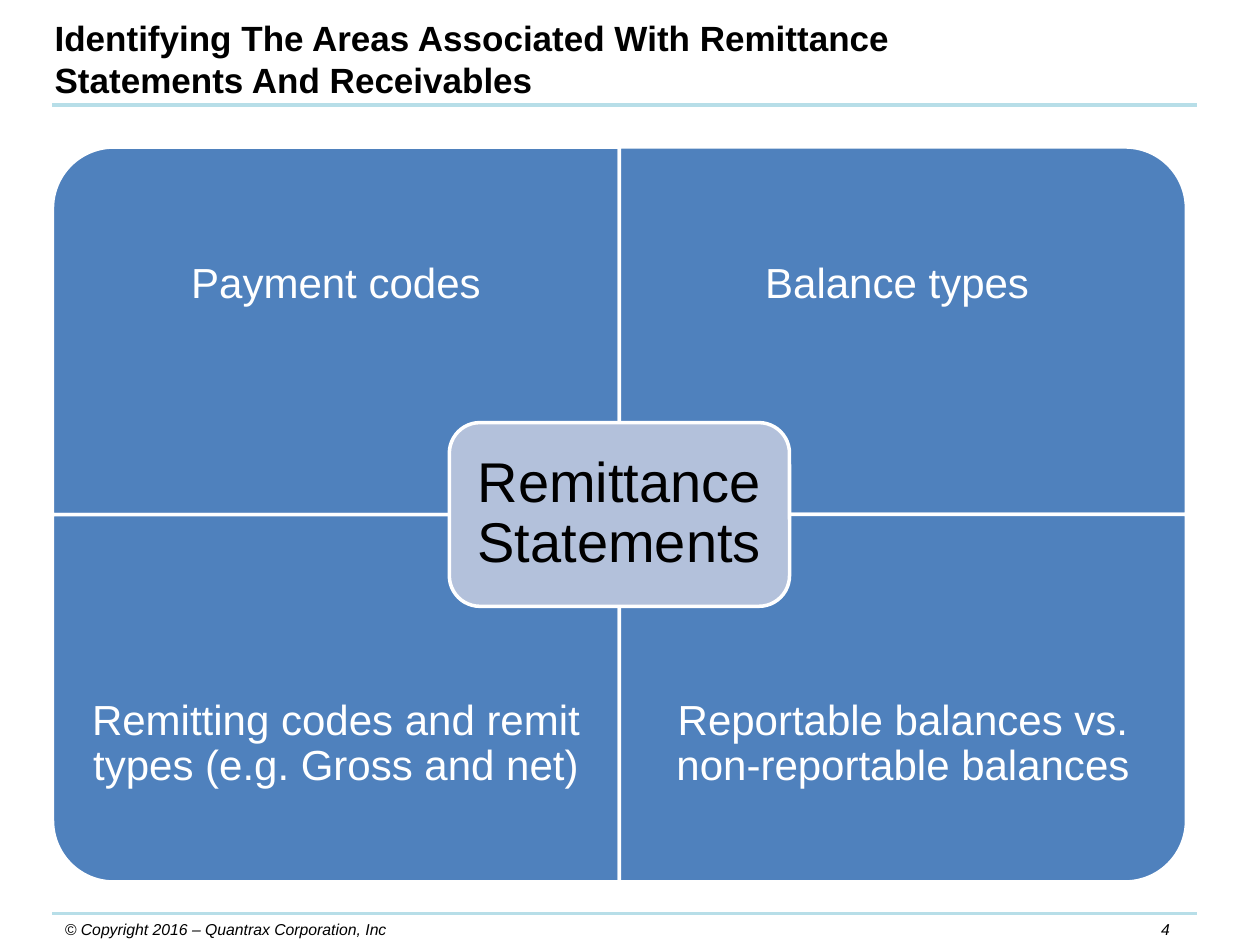
"""Build the slide on the areas associated with remittance statements."""
from dataclasses import dataclass

from pptx import Presentation
from pptx import util as u
from pptx.dml.color import RGBColor
from pptx.enum import shapes, text
from pptx.oxml.ns import qn

COLORS = {"ink": "000000", "paper": "FFFFFF", "rule": "B7DEE8",
          "area": "4F81BD", "hub": "B3C1DB"}
FONT = "Arial"
MATRIX_LEFT, MATRIX_TOP = 30, 84
AREA_WIDTH, AREA_HEIGHT = 324, 210
LABEL_HEIGHT = AREA_HEIGHT * 0.75
HUB_WIDTH, HUB_HEIGHT = 194.4, 105


@dataclass(frozen=True)
class Box:
    left: float
    top: float
    width: float
    height: float

    def lengths(self) -> tuple:
        return tuple(u.Pt(n) for n in (self.left, self.top, self.width, self.height))

    def turned(self) -> "Box":
        shift = (self.width - self.height) / 2
        return Box(self.left + shift, self.top - shift, self.height, self.width)


@dataclass(frozen=True)
class Area:
    caption: str
    column: int
    row: int
    rotation: int


AREAS = [
    Area("Payment codes", 0, 0, 270),
    Area("Balance types ", 1, 0, 0),
    Area("Remitting codes and remit types (e.g. Gross and net)", 0, 1, 180),
    Area("Reportable balances vs. non-reportable balances", 1, 1, 90),
]


def rgb(name: str) -> RGBColor:
    return RGBColor.from_string(COLORS[name])


def write(frame, words: str, size: float, color: str, align,
          bold: bool = False, italic: bool = False):
    frame.word_wrap = True
    paragraph = frame.paragraphs[0]
    paragraph.alignment = align
    run = paragraph.add_run()
    run.text = words
    run.font.name, run.font.size = FONT, u.Pt(size)
    run.font.bold, run.font.italic = bold, italic
    run.font.color.rgb = rgb(color)
    return paragraph


def write_caption(frame, words: str, size: float, color: str, margin: float) -> None:
    frame.margin_left = frame.margin_right = u.Pt(margin)
    frame.margin_top = frame.margin_bottom = u.Pt(margin)
    frame.vertical_anchor = text.MSO_ANCHOR.MIDDLE
    paragraph = write(frame, words, size, color, text.PP_ALIGN.CENTER)
    paragraph.line_spacing = 0.9


def draw_panel(slide, preset, box: Box, fill: str, rotation: int = 0):
    panel = slide.shapes.add_shape(preset, *box.lengths())
    panel.rotation = rotation
    panel.shadow.inherit = False
    panel.fill.solid()
    panel.fill.fore_color.rgb = rgb(fill)
    panel.line.color.rgb = rgb("paper")
    panel.line.width = u.Pt(2)
    return panel


def draw_area(slide, area: Area) -> None:
    box = Box(MATRIX_LEFT + area.column * AREA_WIDTH,
              MATRIX_TOP + area.row * AREA_HEIGHT, AREA_WIDTH, AREA_HEIGHT)
    outline = box.turned() if area.rotation % 180 else box
    draw_panel(slide, shapes.MSO_SHAPE.ROUND_1_RECTANGLE, outline, "area", area.rotation)
    label_top = box.top + area.row * (AREA_HEIGHT - LABEL_HEIGHT)
    label = Box(box.left, label_top, AREA_WIDTH, LABEL_HEIGHT)
    caption = slide.shapes.add_textbox(*label.lengths())
    write_caption(caption.text_frame, area.caption, 24, "paper", 13.5)


def draw_hub(slide) -> None:
    box = Box(MATRIX_LEFT + AREA_WIDTH - HUB_WIDTH / 2,
              MATRIX_TOP + AREA_HEIGHT - HUB_HEIGHT / 2, HUB_WIDTH, HUB_HEIGHT)
    hub = draw_panel(slide, shapes.MSO_SHAPE.ROUNDED_RECTANGLE, box, "hub")
    write_caption(hub.text_frame, "Remittance Statements", 32, "ink", 9.4)


def draw_rule(slide, y: float) -> None:
    rule = slide.shapes.add_connector(
        shapes.MSO_CONNECTOR.STRAIGHT, u.Pt(30), u.Pt(y), u.Pt(684), u.Pt(y))
    rule.line.color.rgb = rgb("rule")
    rule.line.width = u.Pt(2.25)
    properties = rule._element.spPr
    properties.append(properties.makeelement(qn("a:effectLst"), {}))


def draw_footer(slide, words: str, box: Box, align) -> None:
    footer = slide.shapes.add_textbox(*box.lengths())
    write(footer.text_frame, words, 9, "ink", align, italic=True)


def fill_title(slide) -> None:
    title = slide.shapes.title
    title.left, title.top, title.width, title.height = Box(24, 6, 528, 55.5).lengths()
    frame = title.text_frame
    frame.auto_size = text.MSO_AUTO_SIZE.NONE
    frame.vertical_anchor = text.MSO_ANCHOR.TOP
    write(frame, "Identifying The Areas Associated With Remittance Statements And Receivables",
          20, "ink", text.PP_ALIGN.LEFT, bold=True)


def main() -> None:
    deck = Presentation()
    deck.slide_width, deck.slide_height = u.Pt(720), u.Pt(540)
    slide = deck.slides.add_slide(deck.slide_layouts[5])
    fill_title(slide)
    for y in (60, 522):
        draw_rule(slide, y)
    draw_footer(slide, "4", Box(648, 522, 36, 18), text.PP_ALIGN.CENTER)
    draw_footer(slide, "© Copyright 2016 – Quantrax Corporation, Inc",
                Box(30, 522, 234, 18), text.PP_ALIGN.LEFT)
    for area in AREAS:
        draw_area(slide, area)
    draw_hub(slide)
    deck.save("out.pptx")


if __name__ == "__main__":
    main()
